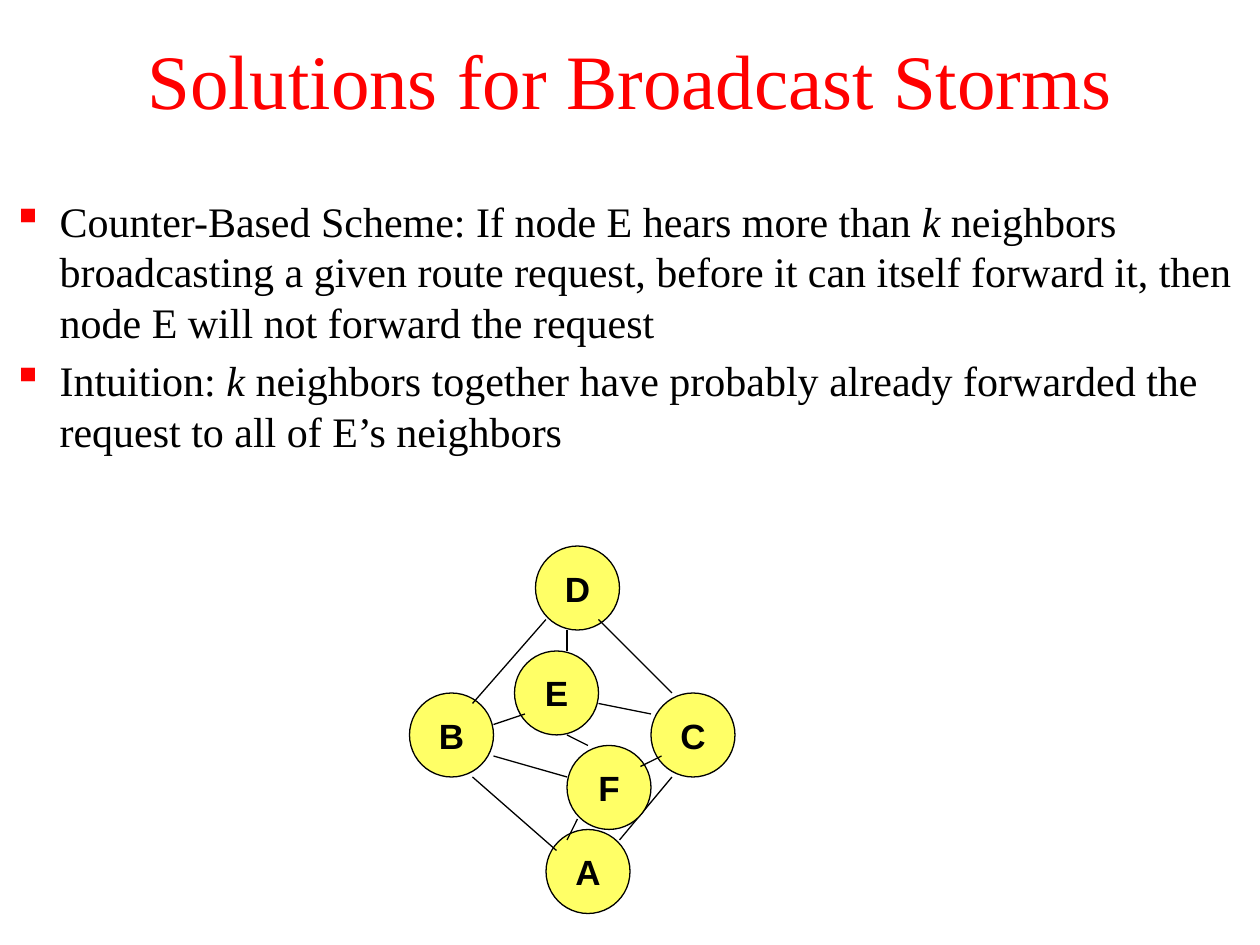
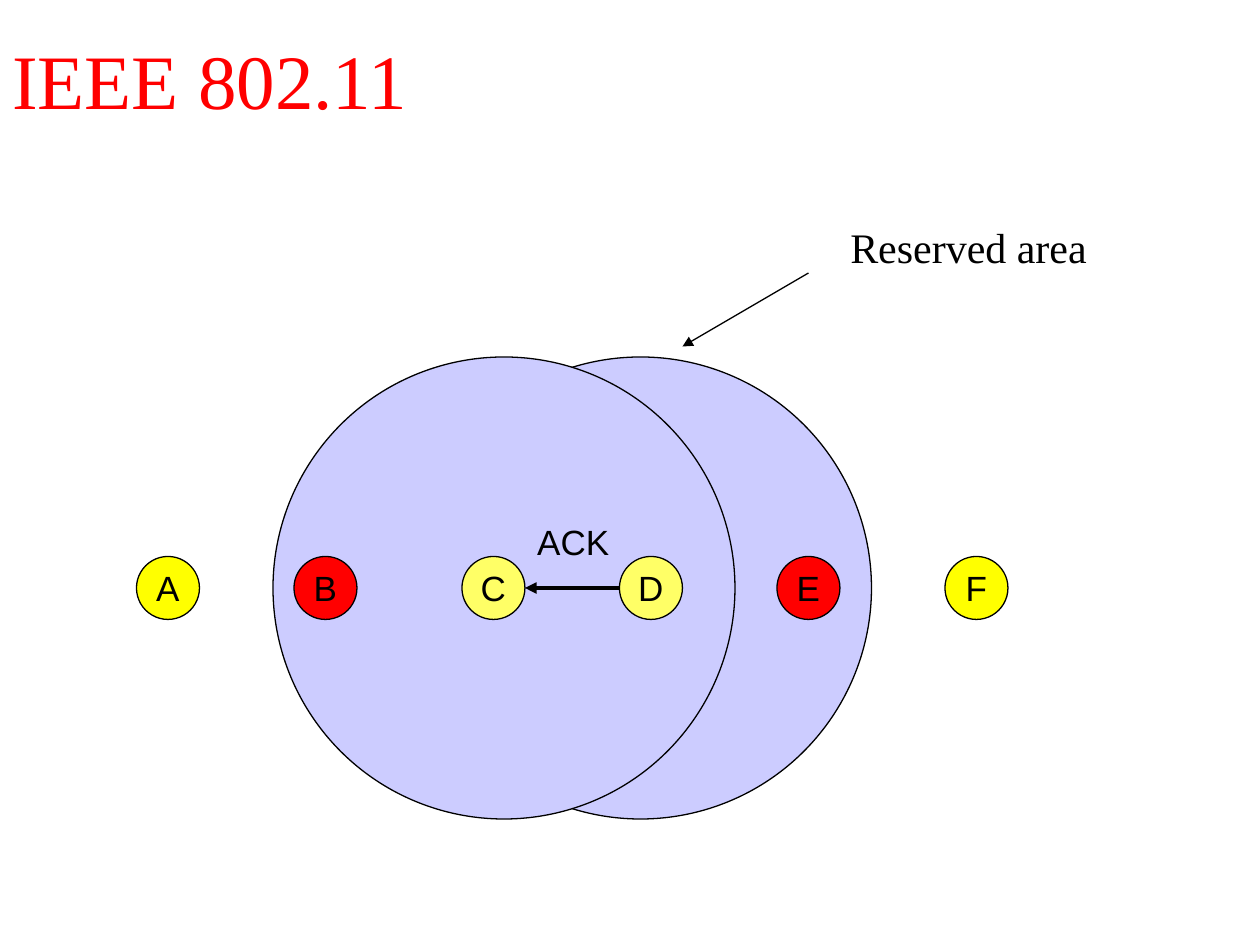
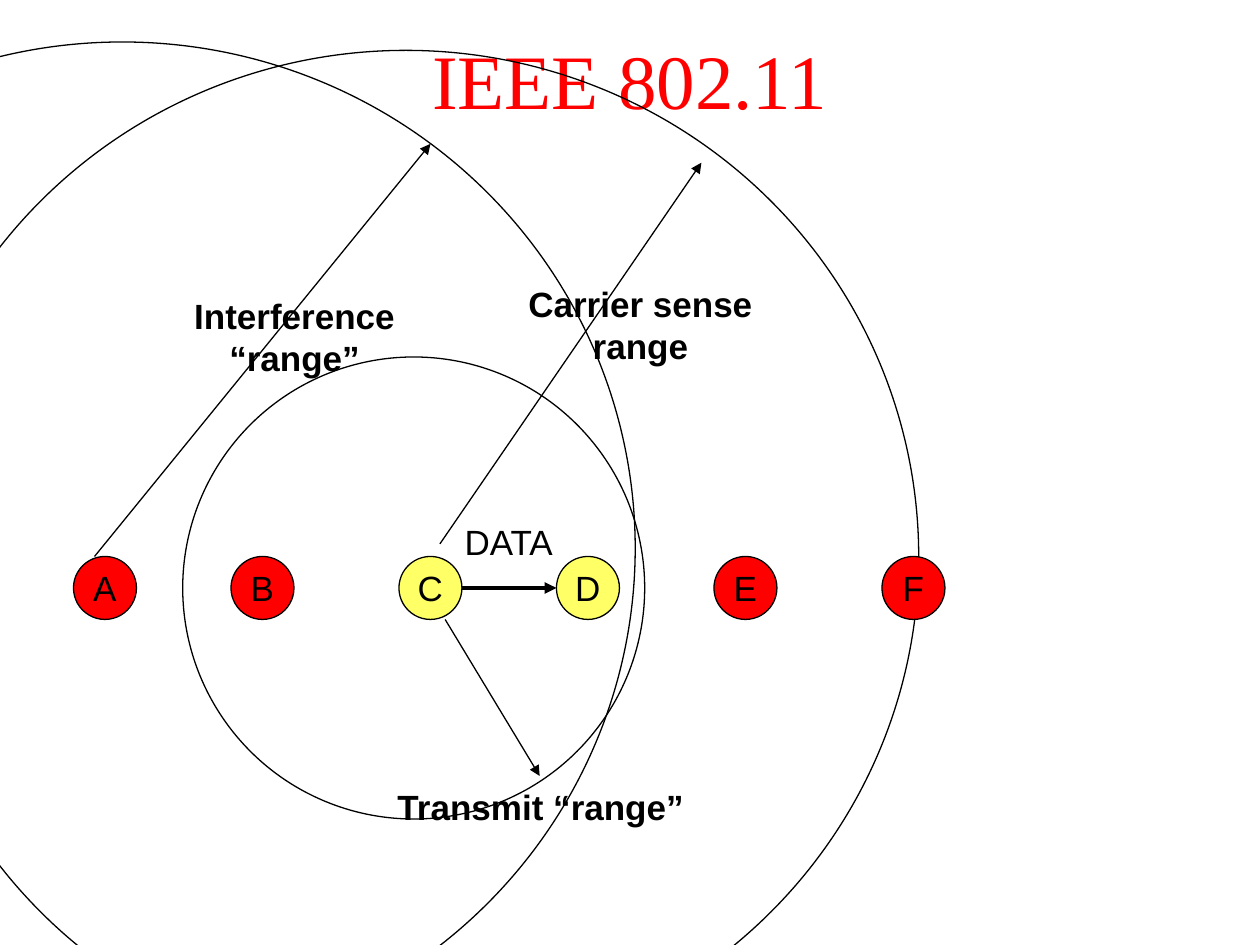
from dataclasses import dataclass

from lxml.etree import SubElement
from pptx import Presentation
from pptx.dml.color import RGBColor
from pptx.enum.shapes import MSO_CONNECTOR as Connector
from pptx.enum.shapes import MSO_SHAPE as Preset
from pptx.enum.text import MSO_ANCHOR as Anchor
from pptx.enum.text import PP_ALIGN as Align
from pptx.oxml.ns import qn
from pptx.slide import Slide
from pptx.text.text import _Paragraph as Paragraph
from pptx.util import Cm, Length, Pt

COLORS = {
    "ink": "000000",
    "red": "FF0000",
    "yellow": "FFFF00",
    "soft_yellow": "FFFF66",
    "lavender": "CCCCFF",
}
SERIF, SANS = "Times New Roman", "Arial"

# All positions count steps of a grid with 12 steps to 2.54 cm
GRID_CM = 2.54 / 12
SLIDE_WIDTH, SLIDE_HEIGHT = 120, 90
ROW_TOP, ROW_CENTER, STATION_SIZE = 53, 56, 6
ROUTER_SIZE = 8
TRANSMIT_SIZE = 44
WIDE_RANGE = (97.7, 96.4)


@dataclass(frozen=True)
class Style:
    font: str = SANS
    size: float = 20
    color: str = "ink"
    bold: bool = False


@dataclass(frozen=True)
class Circle:
    left: float
    top: float
    width: float
    height: float
    fill: str | None = None
    label: str = ""
    style: Style = Style()


@dataclass(frozen=True)
class Link:
    x1: float
    y1: float
    x2: float
    y2: float
    weight: float = 0.75
    arrow: bool = False


@dataclass(frozen=True)
class Label:
    left: float
    top: float
    width: float
    height: float
    lines: tuple[str, ...]
    style: Style = Style()
    align: Align = Align.CENTER
    anchor: Anchor = Anchor.TOP
    wrap: bool = False


@dataclass(frozen=True)
class Range:
    circle: Circle
    radius: Link
    label: Label


TITLE = Style(SERIF, 44, "red")
BODY = Style(SERIF, 24)
BOLD = Style(bold=True)


def grid(steps: float) -> Length:
    return Cm(steps * GRID_CM)


def rgb(name: str) -> RGBColor:
    return RGBColor.from_string(COLORS[name])


# Drawing helpers
def add_run(paragraph: Paragraph, text: str, style: Style, italic: bool = False) -> None:
    run = paragraph.add_run()
    run.text = text
    run.font.name = style.font
    run.font.size = Pt(style.size)
    run.font.bold = style.bold
    run.font.italic = italic
    run.font.color.rgb = rgb(style.color)


def add_circle(slide: Slide, circle: Circle) -> None:
    box = map(grid, (circle.left, circle.top, circle.width, circle.height))
    shape = slide.shapes.add_shape(Preset.OVAL, *box)
    shape.shadow.inherit = False
    if circle.fill:
        shape.fill.solid()
        shape.fill.fore_color.rgb = rgb(circle.fill)
    else:
        shape.fill.background()
    shape.line.color.rgb = rgb("ink")
    shape.line.width = Pt(0.75)
    if circle.label:
        frame = shape.text_frame
        frame.word_wrap = False
        frame.vertical_anchor = Anchor.MIDDLE
        paragraph = frame.paragraphs[0]
        paragraph.alignment = Align.CENTER
        add_run(paragraph, circle.label, circle.style)


def add_link(slide: Slide, link: Link) -> None:
    ends = map(grid, (link.x1, link.y1, link.x2, link.y2))
    connector = slide.shapes.add_connector(Connector.STRAIGHT, *ends)
    connector.line.color.rgb = rgb("ink")
    connector.line.width = Pt(link.weight)
    if link.arrow:
        SubElement(connector.line._get_or_add_ln(), qn("a:tailEnd"), type="triangle")
    SubElement(connector._element.spPr, qn("a:effectLst"))


def add_label(slide: Slide, label: Label) -> None:
    box = map(grid, (label.left, label.top, label.width, label.height))
    frame = slide.shapes.add_textbox(*box).text_frame
    frame.word_wrap = label.wrap
    frame.vertical_anchor = label.anchor
    for index, line in enumerate(label.lines):
        paragraph = frame.add_paragraph() if index else frame.paragraphs[0]
        paragraph.alignment = label.align
        add_run(paragraph, line, label.style)


def add_title(slide: Slide, text: str, align: Align = Align.CENTER) -> None:
    add_label(slide, Label(0, 0, SLIDE_WIDTH, 15, (text,), TITLE, align, Anchor.MIDDLE, True))


def add_bullets(slide: Slide, items: list[list[tuple[str, bool]]]) -> None:
    box = map(grid, (0, 18, SLIDE_WIDTH, 68))
    frame = slide.shapes.add_textbox(*box).text_frame
    frame.word_wrap = True
    for index, item in enumerate(items):
        paragraph = frame.add_paragraph() if index else frame.paragraphs[0]
        paragraph.space_before = Pt(4.8)
        properties = paragraph._p.get_or_add_pPr()
        indent = grid(4.5)
        properties.set("marL", str(indent))
        properties.set("indent", str(-indent))
        bullet_color = SubElement(properties, qn("a:buClr"))
        SubElement(bullet_color, qn("a:srgbClr"), val=COLORS["red"])
        SubElement(properties, qn("a:buChar"), char="▪")
        for text, italic in item:
            add_run(paragraph, text, BODY, italic)


def add_routers(slide: Slide, routers: dict[str, tuple[float, float]]) -> None:
    for name, (left, top) in routers.items():
        add_circle(slide, Circle(left, top, ROUTER_SIZE, ROUTER_SIZE, "soft_yellow", name, BOLD))


def add_stations(slide: Slide, stations: dict[str, tuple[float, str]]) -> None:
    for name, (left, fill) in stations.items():
        add_circle(slide, Circle(left, ROW_TOP, STATION_SIZE, STATION_SIZE, fill, name))


def add_links(slide: Slide, links: list[Link]) -> None:
    for link in links:
        add_link(slide, link)


# Slides
def build_broadcast_storms(slide: Slide) -> None:
    add_routers(slide, {"B": (39, 66), "D": (51, 52), "C": (62, 66), "A": (52, 79)})
    # Outer links pass behind the inner routers
    add_links(slide, [
        Link(52, 59, 45, 67),
        Link(45, 74, 53, 81),
        Link(64, 74, 59, 80),
        Link(57, 59, 64, 66),
    ])
    add_routers(slide, {"F": (54, 71), "E": (49, 62)})
    add_links(slide, [
        Link(50, 68, 47, 69),
        Link(47, 72, 54, 74),
        Link(54, 70, 56, 71),
        Link(55, 78, 54, 80),
        Link(61, 73, 63, 72),
        Link(57, 67, 62, 68),
        Link(54, 60, 54, 62),
    ])
    add_title(slide, "Solutions for Broadcast Storms")
    add_bullets(slide, [
        [
            ("Counter-Based Scheme: If node E hears more than ", False),
            ("k ", True),
            ("neighbors broadcasting a given route request, before it can itself "
             "forward it, then node E will not forward the request", False),
        ],
        [
            ("Intuition: ", False),
            ("k ", True),
            ("neighbors together have probably already forwarded the request "
             "to all of E’s neighbors", False),
        ],
    ])


def build_reserved_area(slide: Slide) -> None:
    for left in (39, 26):
        add_circle(slide, Circle(left, 34, TRANSMIT_SIZE, TRANSMIT_SIZE, "lavender"))
    add_stations(slide, {
        "A": (13, "yellow"),
        "B": (28, "red"),
        "C": (44, "soft_yellow"),
        "D": (59, "soft_yellow"),
        "E": (74, "red"),
        "F": (90, "yellow"),
    })
    add_link(slide, Link(59, ROW_CENTER, 50, ROW_CENTER, 2.25, True))
    add_label(slide, Label(49.9, 49, 9.4, 5.2, ("ACK",)))
    add_title(slide, "IEEE 802.11", Align.LEFT)
    add_link(slide, Link(77, 26, 65, 33, arrow=True))
    add_label(slide, Label(79.8, 20.5, 25, 6, ("Reserved area",), BODY, Align.LEFT))


def build_ranges(slide: Slide) -> None:
    add_title(slide, "IEEE 802.11")
    add_stations(slide, {
        "B": (22, "red"),
        "C": (38, "soft_yellow"),
        "D": (53, "soft_yellow"),
        "E": (68, "red"),
    })
    add_link(slide, Link(44, ROW_CENTER, 53, ROW_CENTER, 2.25, True))
    add_label(slide, Label(42.8, 49, 11.3, 5.2, ("DATA",)))
    # Each range has an outline, a radius arrow and a name
    ranges = [
        Range(
            Circle(17.4, 34, TRANSMIT_SIZE, TRANSMIT_SIZE),
            Link(42.4, 59, 51.4, 73.9, arrow=True),
            Label(36.6, 74.2, 29.8, 5.2, ("Transmit “range”",), BOLD),
        ),
        Range(
            Circle(-37.2, 4, *WIDE_RANGE),
            Link(9, 53, 41, 13.7, arrow=True),
            Label(17.3, 27.5, 21.5, 9.2, ("Interference", "“range”"), BOLD),
        ),
        Range(
            Circle(-10.2, 4.8, *WIDE_RANGE),
            Link(41.9, 51.8, 66.8, 15.5, arrow=True),
            Label(49.1, 26.3, 23.8, 9.2, ("Carrier sense", "range"), BOLD),
        ),
    ]
    for item in ranges:
        add_circle(slide, item.circle)
        add_link(slide, item.radius)
        add_label(slide, item.label)
    # End stations cover the range outlines
    add_stations(slide, {"F": (84, "red"), "A": (7, "red")})


def main() -> None:
    presentation = Presentation()
    presentation.slide_width = grid(SLIDE_WIDTH)
    presentation.slide_height = grid(SLIDE_HEIGHT)
    blank = presentation.slide_layouts[6]
    for build in (build_broadcast_storms, build_reserved_area, build_ranges):
        build(presentation.slides.add_slide(blank))
    presentation.save("out.pptx")


if __name__ == "__main__":
    main()
